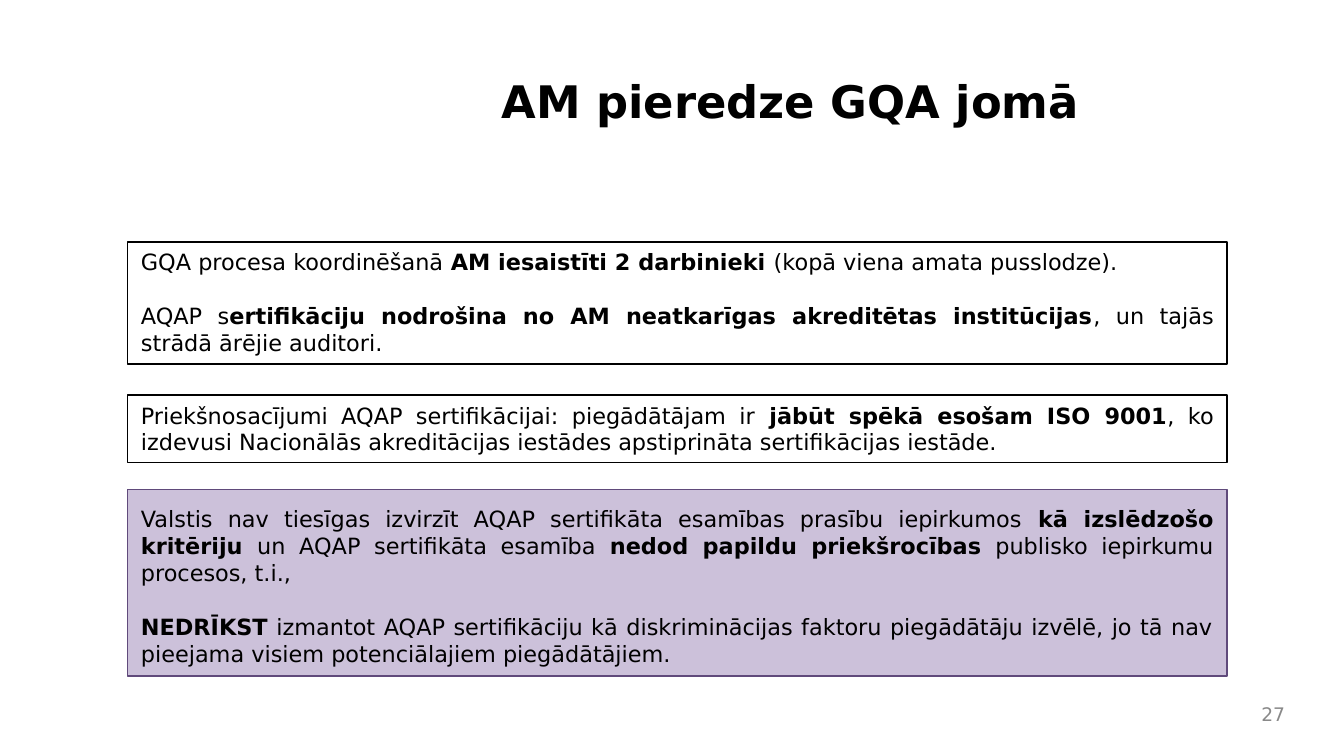
from pptx import Presentation
from pptx import util as u
from pptx.dml.color import RGBColor
from pptx.enum import shapes, text

THEME = {
    "font": "DejaVu Sans",
    "ink": "000000", "grey": "898989", "paper": "FFFFFF",
    "lilac": "CCC1DA", "plum": "604A7B",
    "head": 24, "body": 12, "note": 10, "gap": 14.4, "rule": 0.75,
}
WIDE = 10
HIGH = WIDE * 9 / 16
LEFT, SPAN = 0.95, 8.18

TITLE = "AM pieredze GQA jomā"
PAGE = "27"
PANELS = [
    {"top": 3.64, "high": 1.39, "pad": 0.12, "fill": "lilac", "line": "plum", "paras": [
        "Valstis nav tiesīgas izvirzīt AQAP sertifikāta esamības prasību iepirkumos "
        "**kā izslēdzošo kritēriju **un AQAP sertifikāta esamība "
        "**nedod papildu priekšrocības** publisko iepirkumu procesos, t.i., ",
        "**NEDRĪKST** izmantot AQAP sertifikāciju kā diskriminācijas faktoru piegādātāju "
        "izvēlē, jo tā nav pieejama visiem potenciālajiem piegādātājiem."]},
    {"top": 1.8, "high": 0.91, "pad": 0.05, "fill": "paper", "line": "ink", "paras": [
        "GQA procesa koordinēšanā **AM iesaistīti 2 darbinieki **(kopā viena amata pusslodze).",
        "AQAP s**ertifikāciju nodrošina no AM neatkarīgas akreditētas institūcijas**"
        ", un tajās strādā ārējie auditori."]},
    {"top": 2.94, "high": 0.5, "pad": 0.05, "fill": "paper", "line": "ink", "paras": [
        "Priekšnosacījumi AQAP sertifikācijai: piegādātājam ir **jābūt spēkā esošam ISO 9001**"
        ", ko izdevusi Nacionālās akreditācijas iestādes apstiprināta sertifikācijas iestāde."]},
]


def tint(name):
    return RGBColor.from_string(THEME[name])


def put(item, **vals):
    for key, val in vals.items():
        setattr(item, key, val)


def place(shape, left, top, wide, high):
    put(shape, left=u.Inches(left), top=u.Inches(top),
        width=u.Inches(wide), height=u.Inches(high))


def write(shape, paras, size, color, align, anchor, pad=0.05):
    frame = shape.text_frame
    put(frame, word_wrap=True, auto_size=text.MSO_AUTO_SIZE.NONE, vertical_anchor=anchor,
        margin_left=u.Inches(0.1), margin_right=u.Inches(0.1),
        margin_top=u.Inches(pad), margin_bottom=u.Inches(0.05))
    for row, words in enumerate(paras):
        para = frame.add_paragraph() if row else frame.paragraphs[0]
        put(para, alignment=align, space_before=u.Pt(THEME["gap"] if row else 0))
        for part, piece in enumerate(words.split("**")):
            if piece:
                run = para.add_run()
                run.text = piece
                put(run.font, name=THEME["font"], size=u.Pt(THEME[size]), bold=part % 2 == 1)
                run.font.color.rgb = tint(color)


deck = Presentation()
put(deck, slide_width=u.Inches(WIDE), slide_height=u.Inches(HIGH))
slide = deck.slides.add_slide(deck.slide_layouts[5])

title = slide.shapes.title
place(title, 3.38, 0.5, 5, 0.69)
write(title, [f"**{TITLE}**"], "head", "ink", text.PP_ALIGN.CENTER, text.MSO_ANCHOR.TOP)

page = slide.shapes.add_textbox(0, 0, 0, 0)
place(page, 9.2, 5.19, 0.46, 0.25)
write(page, [PAGE], "note", "grey", text.PP_ALIGN.RIGHT, text.MSO_ANCHOR.MIDDLE)

for panel in PANELS:
    box = slide.shapes.add_shape(shapes.MSO_SHAPE.RECTANGLE, 0, 0, 0, 0)
    place(box, LEFT, panel["top"], SPAN, panel["high"])
    box.shadow.inherit = False
    box.fill.solid()
    box.fill.fore_color.rgb = tint(panel["fill"])
    box.line.color.rgb = tint(panel["line"])
    box.line.width = u.Pt(THEME["rule"])
    write(box, panel["paras"], "body", "ink", text.PP_ALIGN.JUSTIFY,
          text.MSO_ANCHOR.TOP, panel["pad"])

deck.save("out.pptx")
